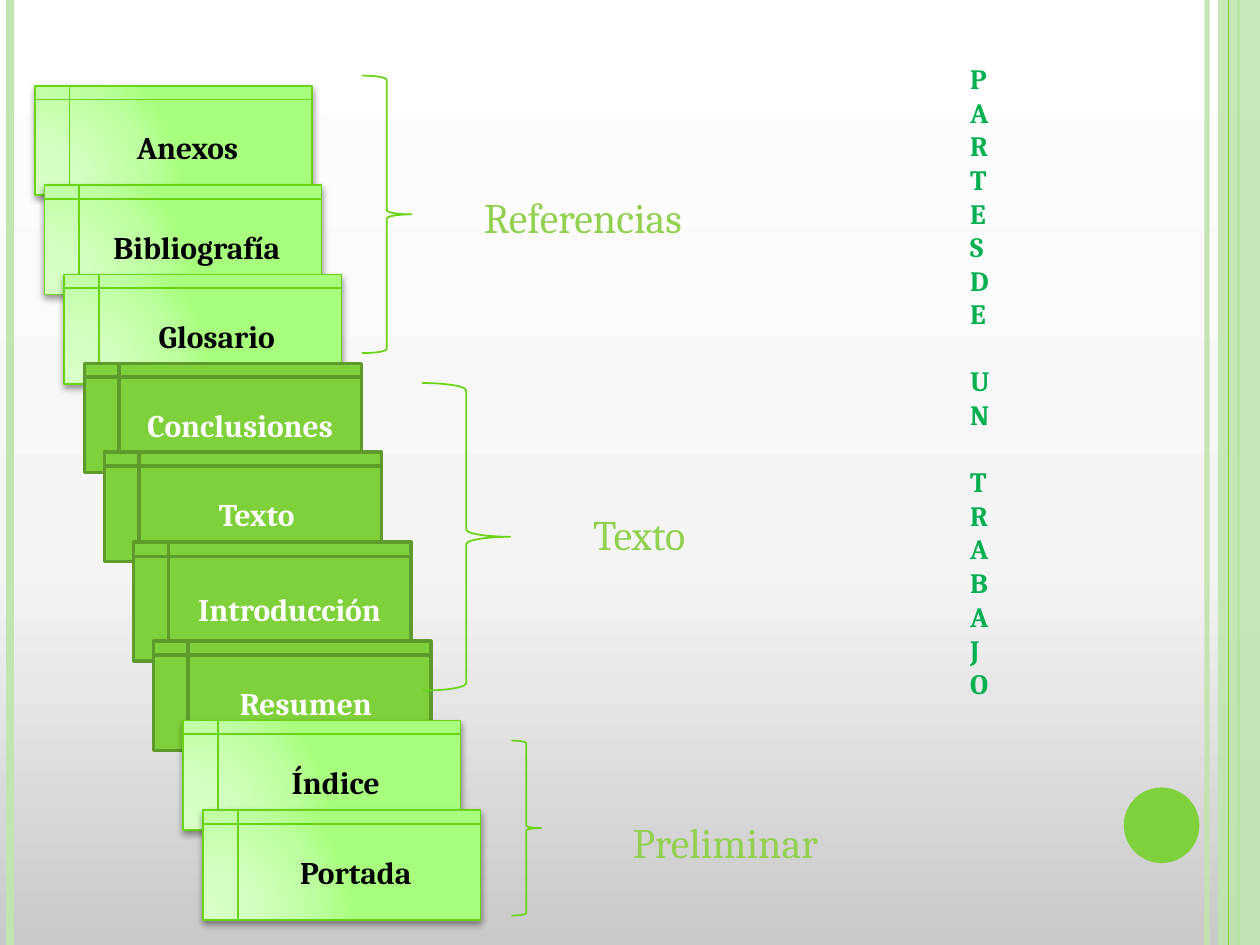
from lxml import etree
from pptx import Presentation
from pptx.dml.color import RGBColor
from pptx.enum.shapes import MSO_CONNECTOR, MSO_SHAPE
from pptx.enum.text import MSO_ANCHOR, MSO_AUTO_SIZE, PP_ALIGN
from pptx.oxml.ns import qn
from pptx.util import Pt

STRAIGHT = MSO_CONNECTOR.STRAIGHT
CARD, BRACE = MSO_SHAPE.FLOWCHART_INTERNAL_STORAGE, MSO_SHAPE.RIGHT_BRACE
RECTANGLE, OVAL = MSO_SHAPE.RECTANGLE, MSO_SHAPE.OVAL
TOP, MIDDLE = MSO_ANCHOR.TOP, MSO_ANCHOR.MIDDLE
LEFT, CENTER = PP_ALIGN.LEFT, PP_ALIGN.CENTER
FIXED = MSO_AUTO_SIZE.NONE

GREEN = RGBColor(0x7F, 0xD1, 0x3B)
DARK_GREEN = RGBColor(0x5E, 0x9B, 0x2C)
BRIGHT_GREEN = RGBColor(0x6A, 0xD3, 0x12)
PALE_GREEN = RGBColor(0xC0, 0xE5, 0xAF)
LABEL_GREEN = RGBColor(0x92, 0xD0, 0x50)
TITLE_GREEN = RGBColor(0x00, 0xB0, 0x50)
BLACK = RGBColor(0, 0, 0)
WHITE = RGBColor(0xFF, 0xFF, 0xFF)
BACKGROUND_STOPS = [
    (0, RGBColor(0xC9, 0xC9, 0xC9)),
    (40, RGBColor(0xF4, 0xF4, 0xF4)),
    (100, WHITE),
]
CARD_STOPS = [
    (0, RGBColor(0xD7, 0xFF, 0xC6)),
    (30, RGBColor(0xD3, 0xFF, 0xC1)),
    (75, RGBColor(0xBD, 0xFF, 0xA0)),
    (100, RGBColor(0xA8, 0xFF, 0x7D)),
]

FONT = "Cambria"
WIDTH, HEIGHT = 720, 540
CARD_WIDTH = 158.4

RULES = [
    (689.8, PALE_GREEN, 3, 93),
    (5.8, PALE_GREEN, 4.5, 100),
    (707.8, GREEN, 1.5, 100),
]
CARDS = [
    ("Anexos ", 20, 49, 62.5, True),
    ("Bibliografía ", 25.4, 105.8, 62.5, True),
    ("Glosario ", 36.8, 156.8, 62.5, True),
    ("Conclusiones", 48.2, 207.6, 62.5, False),
    ("Texto ", 59.6, 258.4, 62.5, False),
    ("Introducción", 76.4, 309.6, 68, False),
    ("Resumen ", 87.8, 366.4, 62.5, False),
    ("Índice ", 104.8, 411.8, 62.5, True),
    ("Portada ", 116.2, 463, 62.5, True),
]
BRACES = [
    (206.8, 43.2, 28.4, 158.6),
    (241.2, 218.9, 50.4, 175.8),
    (292.2, 423.2, 17, 100),
]
LABELS = [
    ("Preliminar", 354.4, 463, 147.6),
    ("Texto", 331.8, 287.3, 147.6),
    ("Referencias", 269.4, 105.8, 187.2),
]


def add_child(parent, tag, **attributes):
    return etree.SubElement(parent, qn(tag), attributes)


def add_color(parent, color, alpha=100):
    element = add_child(parent, "a:srgbClr", val=str(color))
    if alpha < 100:
        add_child(element, "a:alpha", val=str(alpha * 1000))


def set_gradient(fill, owner, stops):
    fill.gradient()
    gradient = next(owner.iter(qn("a:gradFill")))
    for child in list(gradient):
        gradient.remove(child)
    stop_list = add_child(gradient, "a:gsLst")
    for position, color in stops:
        add_color(add_child(stop_list, "a:gs", pos=str(position * 1000)), color)
    return gradient


def set_alpha(element, alpha):
    if alpha < 100:
        color = next(element.iter(qn("a:srgbClr")))
        add_child(color, "a:alpha", val=str(alpha * 1000))


def write_text(shape, text, size, color, bold=False, align=LEFT, anchor=TOP):
    frame = shape.text_frame
    frame.word_wrap = True
    frame.auto_size = FIXED
    frame.vertical_anchor = anchor
    paragraph = frame.paragraphs[0]
    paragraph.alignment = align
    run = paragraph.add_run()
    run.text = text
    run.font.name = FONT
    run.font.size = Pt(size)
    run.font.bold = bold
    run.font.color.rgb = color


def add_rule(slide, x, color, width, alpha=100):
    rule = slide.shapes.add_connector(STRAIGHT, Pt(x), 0, Pt(x), Pt(HEIGHT))
    rule.line.color.rgb = color
    rule.line.width = Pt(width)
    properties = rule._element.spPr
    set_alpha(properties, alpha)
    add_child(properties, "a:effectLst")


def add_preset(slide, kind, left, top, width, height,
               fill=None, line=None, line_width=1, alpha=100):
    shape = slide.shapes.add_shape(kind, Pt(left), Pt(top), Pt(width), Pt(height))
    shape.shadow.inherit = False
    if fill is None:
        shape.fill.background()
    else:
        shape.fill.solid()
        shape.fill.fore_color.rgb = fill
        set_alpha(shape._element.spPr, alpha)
    if line is None:
        shape.line.fill.background()
    else:
        shape.line.color.rgb = line
        shape.line.width = Pt(line_width)
    return shape


def add_shadow(shape):
    effects = shape._element.spPr.find(qn("a:effectLst"))
    shadow = add_child(effects, "a:outerShdw", blurRad=str(Pt(4)), dist=str(Pt(2)),
                       dir="5400000", rotWithShape="0")
    add_color(shadow, BLACK, 40)


def add_card(slide, text, left, top, height, light):
    box = (left, top, CARD_WIDTH, height)
    if light:
        card = add_preset(slide, CARD, *box, line=BRIGHT_GREEN)
        gradient = set_gradient(card.fill, card._element.spPr, CARD_STOPS)
        circle = add_child(gradient, "a:path", path="circle")
        add_child(circle, "a:fillToRect", l="5000", t="100000", r="120000", b="10000")
        add_shadow(card)
    else:
        card = add_preset(slide, CARD, *box, fill=GREEN, line=DARK_GREEN, line_width=2)
    write_text(card, text, size=18, color=BLACK if light else WHITE, bold=True,
               align=CENTER, anchor=MIDDLE)


def add_label(slide, text, left, top, width):
    label = slide.shapes.add_textbox(Pt(left), Pt(top), Pt(width), Pt(36))
    write_text(label, text, size=24, color=LABEL_GREEN)


def place_title(slide, text):
    title = slide.shapes.title
    title.left, title.top, title.width, title.height = Pt(547.2), Pt(31.7), Pt(22.3), Pt(395.3)
    write_text(title, text, size=16, color=TITLE_GREEN, bold=True)


def main():
    presentation = Presentation()
    presentation.slide_width, presentation.slide_height = Pt(WIDTH), Pt(HEIGHT)
    slide = presentation.slides.add_slide(presentation.slide_layouts[5])
    gradient = set_gradient(slide.background.fill, slide._element, BACKGROUND_STOPS)
    add_child(gradient, "a:lin", ang="16200000", scaled="0")

    for rule in RULES:
        add_rule(slide, *rule)
    add_preset(slide, RECTANGLE, 696, 0, 24, HEIGHT, fill=PALE_GREEN, alpha=87)
    add_rule(slide, 702, GREEN, 0.75)
    add_preset(slide, OVAL, 642.2, 450, 43.2, 43.2, fill=GREEN)

    for card in CARDS:
        add_card(slide, *card)
    for brace in BRACES:
        add_preset(slide, BRACE, *brace, line=BRIGHT_GREEN)
    for label in LABELS:
        add_label(slide, *label)
    place_title(slide, "PARTES DE UN TRABAJO")
    presentation.save("out.pptx")


if __name__ == "__main__":
    main()
